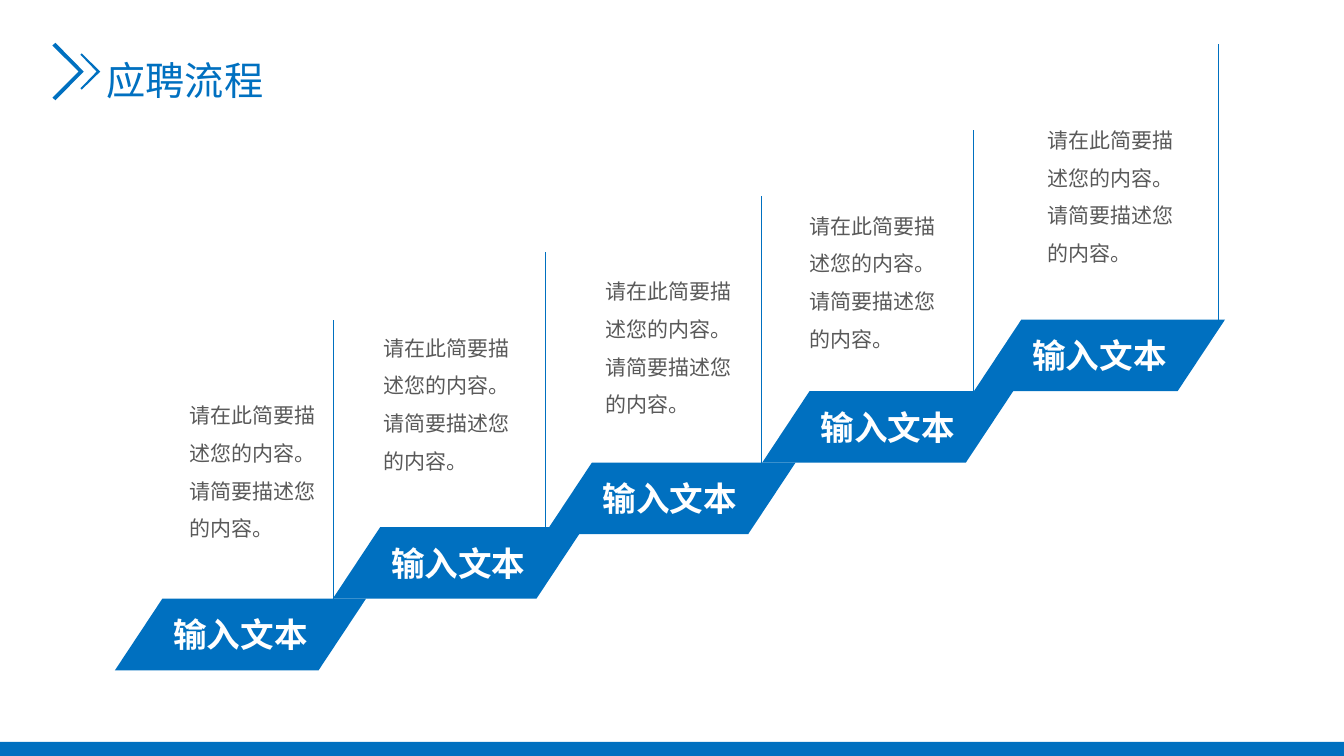
from lxml.etree import SubElement
from pptx import Presentation
from pptx.dml.color import RGBColor as Rgb
from pptx.enum.shapes import MSO_CONNECTOR as Connector
from pptx.enum.shapes import MSO_SHAPE as Shape
from pptx.enum.text import MSO_ANCHOR as Anchor
from pptx.enum.text import PP_ALIGN as Align
from pptx.oxml.ns import qn
from pptx.util import Inches, Pt

COLORS = {"blue": "0070C0", "gray": "595959", "white": "FFFFFF"}
CJK_FONT = "Noto Sans CJK SC"
STEP_LABEL = "输入文本"
STEP_NOTE = "请在此简要描述您的内容。请简要描述您的内容。"
STEP_SIZE = (18.68, 9.47)
NOTE_SIZE = (11.55, 26.53)
NOTE_DROP = 8.67
RULE_HEIGHT = 36.93
STEPS = [
    (8.55, 79.2),
    (24.76, 69.73),
    (40.51, 61.2),
    (56.71, 51.73),
    (72.47, 42.27),
]
RULES = [
    (24.76, 42.27),
    (40.59, 33.33),
    (56.64, 25.87),
    (72.39, 17.2),
    (90.62, 5.87),
]
NOTE_LEFTS = [13.35, 27.83, 44.34, 59.49, 77.19]


class ProcessPage:
    """Draws styled elements on one slide, with lengths in percent of its size."""

    def __init__(self, deck):
        self.width, self.height = deck.slide_width, deck.slide_height
        self.page = deck.slides.add_slide(deck.slide_layouts[6])
        self.shapes = self.page.shapes
        background = self.page.background.fill
        background.solid()
        background.fore_color.rgb = self.color("white")

    def color(self, name):
        return Rgb.from_string(COLORS[name])

    def point(self, across, down):
        return round(self.width * across / 100), round(self.height * down / 100)

    def paint(self, shape):
        shape.shadow.inherit = False
        shape.fill.solid()
        shape.fill.fore_color.rgb = self.color("blue")
        shape.line.fill.background()

    def label(self, box, text, size, color, font=CJK_FONT, bold=False):
        box.text_frame.text = text
        para = box.text_frame.paragraphs[0]
        span = para.runs[0]
        span.font.name = font
        span.font.size = Pt(size)
        span.font.bold = bold
        span.font.color.rgb = self.color(color)
        SubElement(span.font._element, qn("a:ea")).set("typeface", CJK_FONT)
        return para

    def block(self, kind, place, size):
        shape = self.shapes.add_shape(kind, *self.point(*place), *self.point(*size))
        self.paint(shape)
        return shape

    def step(self, place):
        shape = self.block(Shape.PARALLELOGRAM, place, STEP_SIZE)
        shape.adjustments[0] = 0.662
        shape.text_frame.word_wrap = True
        shape.text_frame.vertical_anchor = Anchor.MIDDLE
        para = self.label(shape, STEP_LABEL, 24, "white", bold=True)
        para.alignment = Align.CENTER

    def text(self, place, size, text, points, color, font=CJK_FONT, wrap=True):
        box = self.shapes.add_textbox(*self.point(*place), *self.point(*size))
        box.text_frame.word_wrap = wrap
        self.label(box, text, points, color, font).line_spacing = 1.5

    def rule(self, across, top):
        line = self.shapes.add_connector(
            Connector.STRAIGHT,
            *self.point(across, top + RULE_HEIGHT),
            *self.point(across, top),
        )
        line.line.color.rgb = self.color("blue")
        line.line.width = Pt(0.25)
        SubElement(line._element.spPr, qn("a:effectLst"))

    def chevron(self, back, tip, half, cut, rise, inner, middle=9.47):
        outline = [
            (back, middle - half),
            (tip, middle),
            (back, middle + half),
            (back - cut, middle + half - rise),
            (tip - inner, middle),
            (back - cut, middle - half + rise),
        ]
        start, *others = [self.point(*corner) for corner in outline]
        builder = self.shapes.build_freeform(*start)
        builder.add_line_segments(others, close=True)
        self.paint(builder.convert_to_shape())


def main():
    deck = Presentation()
    deck.slide_width, deck.slide_height = Inches(13.33), Inches(7.5)
    process = ProcessPage(deck)
    process.chevron(6.08, 7.46, 2.4, 0.1, 0.17, 0.27)
    process.chevron(4.13, 6.23, 3.8, 0.23, 0.35, 0.38)
    process.block(Shape.RECTANGLE, (0, 98.13), (100, 1.87))
    process.text((7.2, 3.73), (13.28, 10.8), "应聘流程", 28, "blue", wrap=False)
    for place in STEPS:
        process.step(place)
    for (across, top), left in zip(RULES, NOTE_LEFTS):
        process.rule(across, top)
        place = (left, top + NOTE_DROP)
        process.text(place, NOTE_SIZE, STEP_NOTE, 15, "gray", font="Arial")
    deck.save("out.pptx")


if __name__ == "__main__":
    main()
